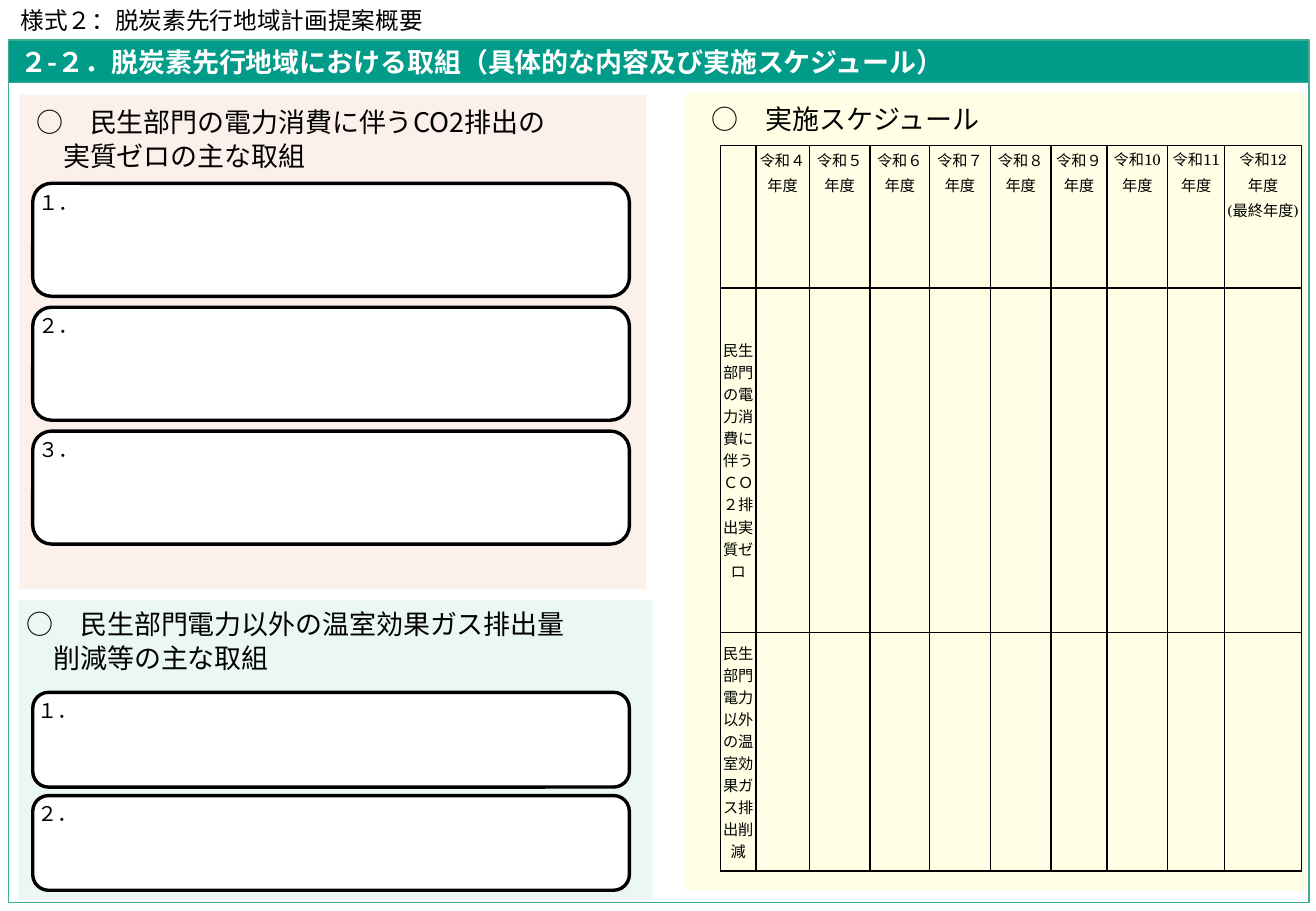
import dataclasses

import pptx
import pptx.dml.color
import pptx.enum.shapes
import pptx.enum.text
import pptx.oxml.ns
import pptx.oxml.xmlchemy
import pptx.util
from lxml import etree

ALIGN = pptx.enum.text.PP_ALIGN
ANCHOR = pptx.enum.text.MSO_ANCHOR
FIT = pptx.enum.text.MSO_AUTO_SIZE
SHAPE = pptx.enum.shapes.MSO_SHAPE
qn = pptx.oxml.ns.qn
WIDTH, HEIGHT = pptx.util.Inches(10.83), pptx.util.Inches(7.5)


@dataclasses.dataclass(frozen=True)
class Theme:
    sans: str = "Noto Sans CJK JP"
    serif: str = "TeX Gyre Schola"
    ink: str = "000000"
    paper: str = "FFFFFF"
    bar: str = "009C89"
    frame: str = "3EAD92"
    pink: str = "FBE5D6"
    green: str = "D9F1EB"
    yellow: str = "FFFFCC"
    heading: float = 16
    label: float = 14
    card: float = 12
    cell: float = 9
    leading: float = 1.25


T = Theme()


def rgb(value):
    return pptx.dml.color.RGBColor.from_string(value)


def emu(box):
    """Turn a box in percent of the slide into lengths."""
    x, y, w, h = box
    return [int(v * side / 100) for v, side in
            ((x, WIDTH), (y, HEIGHT), (w, WIDTH), (h, HEIGHT))]


def set_all(obj, values):
    for name, value in values.items():
        setattr(obj, name, value)


def write(tf, lines, size, color=T.ink, font=T.sans, bold=False,
          align=ALIGN.LEFT, leading=T.leading, frame=None):
    set_all(tf, frame or {})
    for i, line in enumerate(lines):
        p = tf.paragraphs[0] if i == 0 else tf.add_paragraph()
        p.alignment = align
        if leading:
            p.line_spacing = pptx.util.Pt(size * leading)
        r = p.add_run()
        r.text = line
        set_all(r.font, {"name": font, "size": pptx.util.Pt(size), "bold": bold})
        r.font.color.rgb = rgb(color)
        ea = etree.SubElement(r.font._element, qn("a:ea"))
        ea.set("typeface", T.sans)


def paint(sp, fill=None, line=None, width=1, alpha=None):
    if fill:
        sp.fill.solid()
        sp.fill.fore_color.rgb = rgb(fill)
    else:
        sp.fill.background()
    if alpha:
        color = sp.fill._xPr.find(".//" + qn("a:srgbClr"))
        etree.SubElement(color, qn("a:alpha")).set("val", str(alpha * 1000))
    if line:
        sp.line.color.rgb = rgb(line)
        sp.line.width = pptx.util.Pt(width)
    else:
        sp.line.fill.background()


def add_shape(s, kind, box, **look):
    sp = s.shapes.add_shape(kind, *emu(box))
    sp.shadow.inherit = False
    paint(sp, **look)
    return sp


def add_text(s, box, lines, size, wrap=True):
    tf = s.shapes.add_textbox(*emu(box)).text_frame
    write(tf, lines, size,
          frame={"word_wrap": wrap, "auto_size": FIT.SHAPE_TO_FIT_TEXT})


# Form label, title bar and outer frame
def add_header(s, box, label, title):
    x, y, w, h = box
    bar = 4.67
    add_text(s, (x, y - 4.53, 32.69, 4.53), [label], T.label, wrap=False)
    sp = s.shapes.title
    set_all(sp, dict(zip(("left", "top", "width", "height"),
                         emu((x, y, w, bar)))))
    paint(sp, fill=T.bar, line=T.frame)
    write(sp.text_frame, [title], T.heading, color=T.paper, bold=True,
          frame={"vertical_anchor": ANCHOR.MIDDLE, "auto_size": FIT.NONE,
                 "word_wrap": True})
    add_shape(s, SHAPE.RECTANGLE, (x, y + bar, w, h - bar), line=T.frame)


# Tinted panel with its heading
def add_panel(s, box, fill, heading, dx, dy):
    x, y, w, h = box
    add_shape(s, SHAPE.RECTANGLE, box, fill=fill, alpha=50)
    add_text(s, (x + dx, y + dy, 45.34, 4.27 * len(heading) + 0.67),
             heading, T.heading)


# Numbered empty cards stacked at an equal pitch
def add_cards(s, box, numbers, pitch):
    x, y, w, h = box
    margins = {"margin_" + side: 0 for side in ("left", "top", "right", "bottom")}
    for i, number in enumerate(numbers):
        sp = add_shape(s, SHAPE.ROUNDED_RECTANGLE, (x, y + i * pitch, w, h),
                       fill=T.paper, line=T.ink, width=2)
        write(sp.text_frame, [number], T.card,
              frame={**margins, "vertical_anchor": ANCHOR.TOP, "word_wrap": True})


def format_cell(cell):
    set_all(cell, {"margin_left": pptx.util.Inches(0.01),
                   "margin_right": pptx.util.Inches(0.01),
                   "margin_top": 0, "margin_bottom": 0})
    cell.fill.background()
    tcPr = cell._tc.get_or_add_tcPr()
    for i, side in enumerate(("lnL", "lnR", "lnT", "lnB")):
        ln = etree.Element(qn("a:" + side), w=str(pptx.util.Pt(1)))
        fill = etree.SubElement(ln, qn("a:solidFill"))
        etree.SubElement(fill, qn("a:srgbClr")).set("val", T.ink)
        tcPr.insert(i, ln)


# Schedule table: fiscal years across, measures down
def add_schedule(s, box, years, measures, cols, rows):
    left, top, width, height = emu(box)
    tbl = s.shapes.add_table(len(rows), len(cols), left, top, width, height).table
    set_all(tbl, {"first_row": False, "horz_banding": False})
    for col, share in zip(tbl.columns, cols):
        col.width = int(width * share / sum(cols))
    for row, share in zip(tbl.rows, rows):
        row.height = int(height * share / sum(rows))
    for cell in tbl.iter_cells():
        format_cell(cell)
    style = {"size": T.cell, "font": T.serif, "align": ALIGN.CENTER}
    for i, year in enumerate(years, 1):
        lines = [year, "年度"] + (["(最終年度)"] if i == len(years) else [])
        write(tbl.cell(0, i).text_frame, lines, leading=15 / T.cell, **style)
    for i, measure in enumerate(measures, 1):
        cell = tbl.cell(i, 0)
        cell.vertical_anchor = ANCHOR.MIDDLE
        cell._tc.get_or_add_tcPr().set("vert", "eaVert")
        write(cell.text_frame, [measure], leading=None, **style)


def main():
    prs = pptx.Presentation()
    set_all(prs, {"slide_width": WIDTH, "slide_height": HEIGHT})
    s = prs.slides.add_slide(prs.slide_layouts.get_by_name("Title Only"))

    add_header(s, (0.65, 4.4, 98.8, 94.67), "様式２：脱炭素先行地域計画提案概要",
               "２-２．脱炭素先行地域における取組（具体的な内容及び実施スケジュール）")

    # Left: measures
    add_panel(s, (1.48, 10.4, 47.65, 54.27), T.pink,
              ["○　民生部門の電力消費に伴うCO2排出の", "　実質ゼロの主な取組"], 0.37, 0.4)
    add_cards(s, (2.49, 20.13, 45.34, 12.4), ["１．", "２．", "３．"], 13.6)
    add_panel(s, (1.39, 65.87, 48.2, 32.8), T.green,
              ["○　民生部門電力以外の温室効果ガス排出量", "　削減等の主な取組"], -0.28, 0)
    add_cards(s, (2.49, 76, 45.34, 10.4), ["１．", "２．"], 11.33)

    # Right: schedule
    add_panel(s, (52.08, 10.13, 47.09, 87.6), T.yellow, ["○　実施スケジュール"], 1.11, 0.27)
    add_schedule(s, (54.76, 16, 44.14, 79.6),
                 ["令和" + n for n in "４ ５ ６ ７ ８ ９ 10 11 12".split()],
                 ["民生部門の電力消費に伴うＣＯ２排出実質ゼロ",
                  "民生部門電力以外の温室効果ガス排出削減"],
                 [0.29, 0.44, 0.5, 0.49, 0.5, 0.5, 0.46, 0.5, 0.47, 0.63],
                 [1.17, 2.84, 1.96])
    prs.save("out.pptx")


if __name__ == "__main__":
    main()
